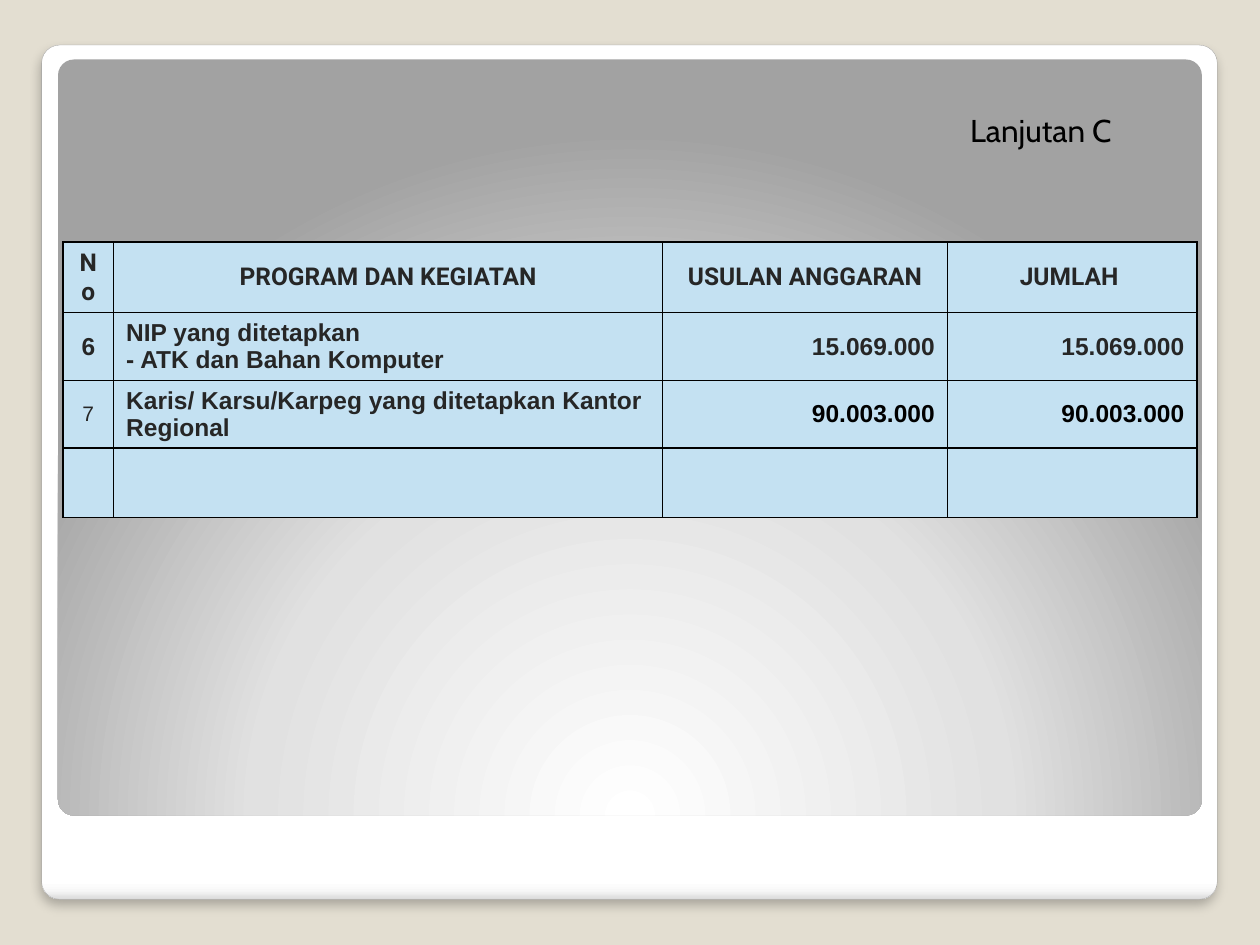
from pptx import Presentation, util as u
from pptx.dml.color import RGBColor
from pptx.enum import shapes, text
from pptx.oxml import parse_xml
from pptx.oxml.ns import nsdecls

Cm, Pt = u.Cm, u.Pt
BEIGE = RGBColor(0xE3, 0xDE, 0xD1)
GREY = RGBColor(0xA4, 0xA4, 0xA4)
DARK = RGBColor(0x26, 0x26, 0x26)
BLACK = RGBColor(0, 0, 0)
BLUE = RGBColor(0xC4, 0xE1, 0xF2)

LEFT, MID, RIGHT = text.PP_ALIGN.LEFT, text.PP_ALIGN.CENTER, text.PP_ALIGN.RIGHT
COLS = [1.02, 11.07, 5.74, 5.03]
ROWS = [1.04, 1.04, 1.35, 1.4]
HEAD = ["No", "PROGRAM DAN KEGIATAN", "USULAN ANGGARAN", "JUMLAH "]
BODY = [
    ["6", "NIP yang ditetapkan\n- ATK dan Bahan Komputer", "15.069.000", "15.069.000"],
    ["7", "Karis/ Karsu/Karpeg yang ditetapkan Kantor Regional",
     "90.003.000", "90.003.000"],
]


def write(frame, words, font="Arial", size=14, color=DARK, bold=True, align=LEFT):
    """Fill a text frame, one paragraph a line."""
    for i, line in enumerate(words.split("\n")):
        par = frame.add_paragraph() if i else frame.paragraphs[0]
        par.alignment = align
        run = par.add_run()
        run.text = line
        run.font.name, run.font.size = font, Pt(size)
        run.font.bold, run.font.color.rgb = bold, color


def panel(slide, box, stops, kind):
    """Add a rounded panel with a gradient fill."""
    shape = slide.shapes.add_shape(
        shapes.MSO_SHAPE.ROUNDED_RECTANGLE, *map(Cm, box))
    shape.adjustments[0] = 0.021
    shape.shadow.inherit = False
    shape.line.fill.background()
    shape.fill.background()
    marks = "".join(f'<a:gs pos="{pos * 1000}"><a:srgbClr val="{hue}"/></a:gs>'
                    for pos, hue in stops)
    grad = parse_xml(f'<a:gradFill {nsdecls("a")} rotWithShape="1">'
                     f'<a:gsLst>{marks}</a:gsLst>{kind}</a:gradFill>')
    props = shape._element.spPr
    props.replace(props.find("{*}noFill"), grad)
    return shape


def shade(shape):
    """Give a shape a soft shadow below it."""
    shape._element.spPr.find("{*}effectLst").append(parse_xml(
        f'<a:outerShdw {nsdecls("a")} blurRad="{Pt(6)}" dist="{Pt(4)}" '
        'dir="5400000" rotWithShape="0"><a:srgbClr val="000000">'
        '<a:alpha val="25000"/></a:srgbClr></a:outerShdw>'))


def edge(cell):
    """Draw thin black borders round a cell."""
    props = cell._tc.get_or_add_tcPr()
    for i, side in enumerate(("lnL", "lnR", "lnT", "lnB")):
        props.insert(i, parse_xml(
            f'<a:{side} {nsdecls("a")} w="{Pt(1)}"><a:solidFill>'
            f'<a:srgbClr val="{BLACK}"/></a:solidFill></a:{side}>'))


def budget(slide):
    """Add the budget table."""
    frame = slide.shapes.add_table(
        len(ROWS), len(COLS), Cm(1.27), Cm(4.88), Cm(sum(COLS)), Cm(sum(ROWS)))
    table = frame.table
    table.first_row = table.horz_banding = False
    for col, width in zip(table.columns, COLS):
        col.width = Cm(width)
    for row, height in zip(table.rows, ROWS):
        row.height = Cm(height)
    for cell in table.iter_cells():
        cell.fill.solid()
        cell.fill.fore_color.rgb = BLUE
        cell.vertical_anchor = text.MSO_ANCHOR.MIDDLE
        edge(cell)

    # Heading row
    for c, words in enumerate(HEAD):
        write(table.cell(0, c).text_frame, words, font="Roboto", align=MID)

    # Body rows; the last row stays empty
    for r, line in enumerate(BODY, 1):
        for c, words in enumerate(line):
            look = {"align": (MID, LEFT, RIGHT, RIGHT)[c]}
            if r == 2 and c == 0:
                look.update(size=12, bold=False)
            elif r == 2 and c > 1:
                look.update(color=BLACK)
            write(table.cell(r, c).text_frame, words, **look)


def title(slide):
    """Add the heading at the top right."""
    box = slide.shapes.add_textbox(Cm(11.86), Cm(2.11), Cm(10.8), Cm(1.07))
    frame = box.text_frame
    frame.word_wrap = True
    frame.auto_size = text.MSO_AUTO_SIZE.SHAPE_TO_FIT_TEXT
    write(frame, "Lanjutan C", font="Cabin", size=18, color=BLACK,
          bold=False, align=RIGHT)


def main():
    deck = Presentation()
    deck.slide_width, deck.slide_height = Cm(25.4), Cm(19.05)
    slide = deck.slides.add_slide(deck.slide_layouts[6])
    slide.background.fill.solid()
    slide.background.fill.fore_color.rgb = BEIGE

    # White card and grey panel
    card = panel(slide, (0.84, 0.91, 23.7, 17.22),
                 [(0, "FFFFFF"), (98, "FFFFFF"), (99, "F7F7F7"), (100, "DADADA")],
                 '<a:lin ang="5400000" scaled="0"/>')
    card.line.color.rgb = GREY
    card.line.width = Pt(0.16)
    shade(card)
    panel(slide, (1.17, 1.2, 23.06, 15.24),
          [(0, "FFFFFF"), (55, "E1E1E1"), (100, "A2A2A2")],
          '<a:path path="circle"><a:fillToRect l="50000" t="175000" '
          'r="50000" b="-75000"/></a:path>')

    # Content
    budget(slide)
    title(slide)
    deck.save("out.pptx")


if __name__ == "__main__":
    main()
